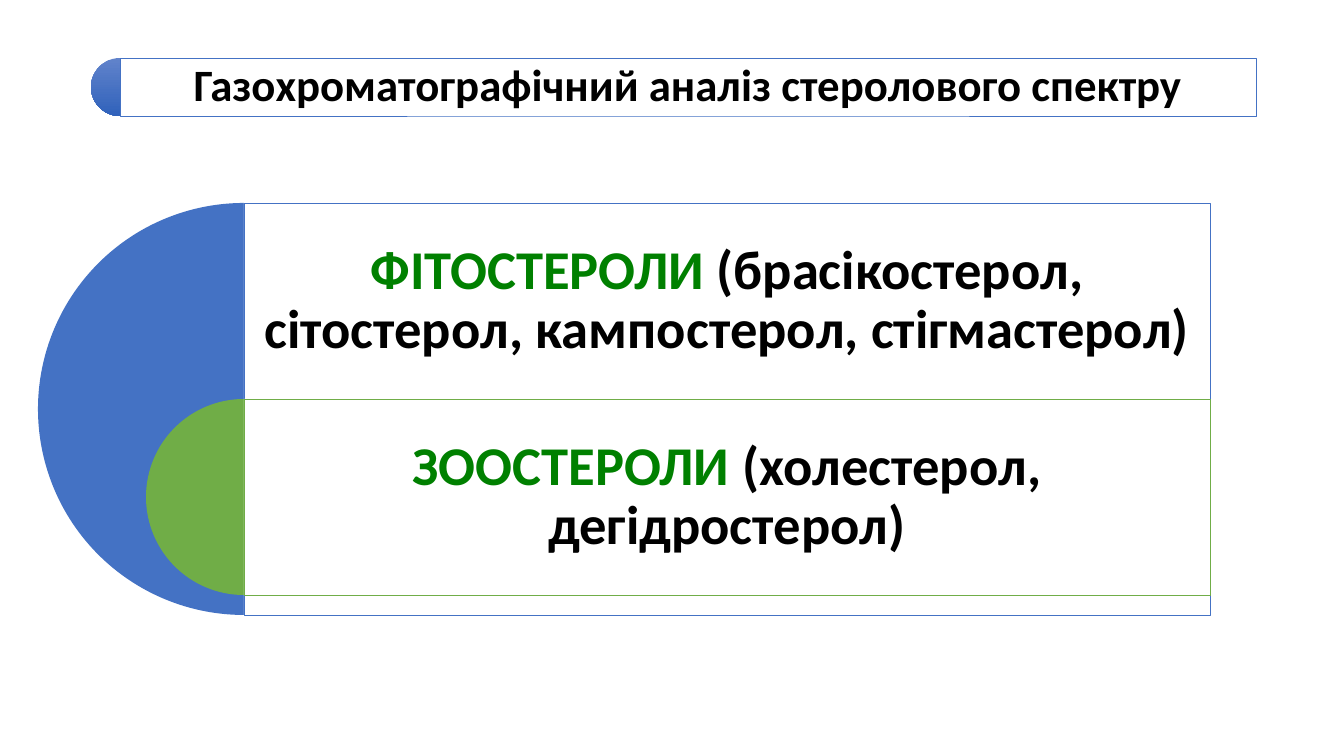
from pptx import Presentation
from pptx.dml.color import RGBColor
from pptx.enum.shapes import MSO_SHAPE
from pptx.enum.text import MSO_ANCHOR, MSO_AUTO_SIZE, PP_ALIGN
from pptx.util import Emu, Pt

PIE, RECTANGLE = MSO_SHAPE.PIE, MSO_SHAPE.RECTANGLE
MIDDLE, CENTER, NO_FIT = MSO_ANCHOR.MIDDLE, PP_ALIGN.CENTER, MSO_AUTO_SIZE.NONE
EMU_PER_PX = 914400 / 100.8
TITLE_ONLY = 5
COLORS = {
    "blue": "4472C4",
    "light_blue": "6183CB",
    "dark_blue": "3062BB",
    "green": "70AD47",
    "term": "008000",
    "text": "000000",
    "white": "FFFFFF",
}
TITLE = "Газохроматографічний аналіз стеролового спектру"
PHYTOSTEROLS = [
    ("ФІТОСТЕРОЛИ ", "term"),
    ("(брасікостерол, сітостерол, кампостерол, стігмастерол)", "text"),
]
ZOOSTEROLS = [("ЗООСТЕРОЛИ", "term"), (" (холестерол, дегідростерол)", "text")]


def px(length):
    """Turn pixels into EMU."""
    return Emu(round(length * EMU_PER_PX))


def rgb(name):
    """Look up a named colour."""
    return RGBColor.from_string(COLORS[name])


def set_all(target, values):
    """Set every attribute given in a dict of format values."""
    for name, value in values.items():
        setattr(target, name, value)


def outline(shape, color):
    """Give a shape a white fill and a thin coloured border."""
    shape.fill.solid()
    shape.fill.fore_color.rgb = rgb("white")
    shape.line.color.rgb = rgb(color)
    shape.line.width = Pt(0.5)


def write(box, spans, size, inset):
    """Write one centred bold paragraph made of coloured spans."""
    frame = box.text_frame
    margins = {f"margin_{side}": px(inset) for side in ("left", "top", "right", "bottom")}
    set_all(frame, {"word_wrap": True, "auto_size": NO_FIT, "vertical_anchor": MIDDLE, **margins})
    para = frame.paragraphs[0]
    set_all(para, {"alignment": CENTER, "line_spacing": 0.9})
    for text, color in spans:
        span = para.add_run()
        span.text = text
        set_all(span.font, {"name": "Calibri", "size": Pt(size), "bold": True})
        span.font.color.rgb = rgb(color)


def add_half_disc(page, center_x, top, diameter, colors):
    """Add the left half of a disc, filled plainly or from top to bottom."""
    disc = page.shapes.add_shape(
        PIE, px(center_x - diameter / 2), px(top), px(diameter), px(diameter))
    disc.shadow.inherit = False
    disc.adjustments[0], disc.adjustments[1] = 54, 162
    disc.line.fill.background()
    if len(colors) == 1:
        disc.fill.solid()
        disc.fill.fore_color.rgb = rgb(colors[0])
    else:
        disc.fill.gradient()
        disc.fill.gradient_angle = 270
        for stop, color in zip(disc.fill.gradient_stops, colors):
            stop.color.rgb = rgb(color)


def add_title(page, left, top, width, height):
    """Place the title in its bordered bar."""
    title = page.shapes.title
    set_all(title, {"left": px(left), "top": px(top), "width": px(width), "height": px(height)})
    outline(title, "blue")
    write(title, [(TITLE, "text")], 32, 13)


def add_group(page, left, top, width, height, color, spans, row_height):
    """Add a half disc, its bordered panel and the label in the first row."""
    add_half_disc(page, left, top, height, [color])
    panel = page.shapes.add_shape(RECTANGLE, px(left), px(top), px(width), px(height))
    panel.shadow.inherit = False
    outline(panel, color)
    label = page.shapes.add_textbox(px(left), px(top), px(width), px(row_height))
    write(label, spans, 39, 16)


def main():
    """Build the slide and save it."""
    deck = Presentation()
    set_all(deck, {"slide_width": px(1344), "slide_height": px(756)})
    page = deck.slides.add_slide(deck.slide_layouts[TITLE_ONLY])
    add_title(page, 120, 58, 1136, 58)
    add_half_disc(page, 120, 58, 58, ["light_blue", "dark_blue"])
    left, top, width, row = 244, 203, 966, 196
    add_group(page, left, top, width, 412, "blue", PHYTOSTEROLS, row)
    add_group(page, left, top + row, width, row, "green", ZOOSTEROLS, row)
    deck.save("out.pptx")


if __name__ == "__main__":
    main()
